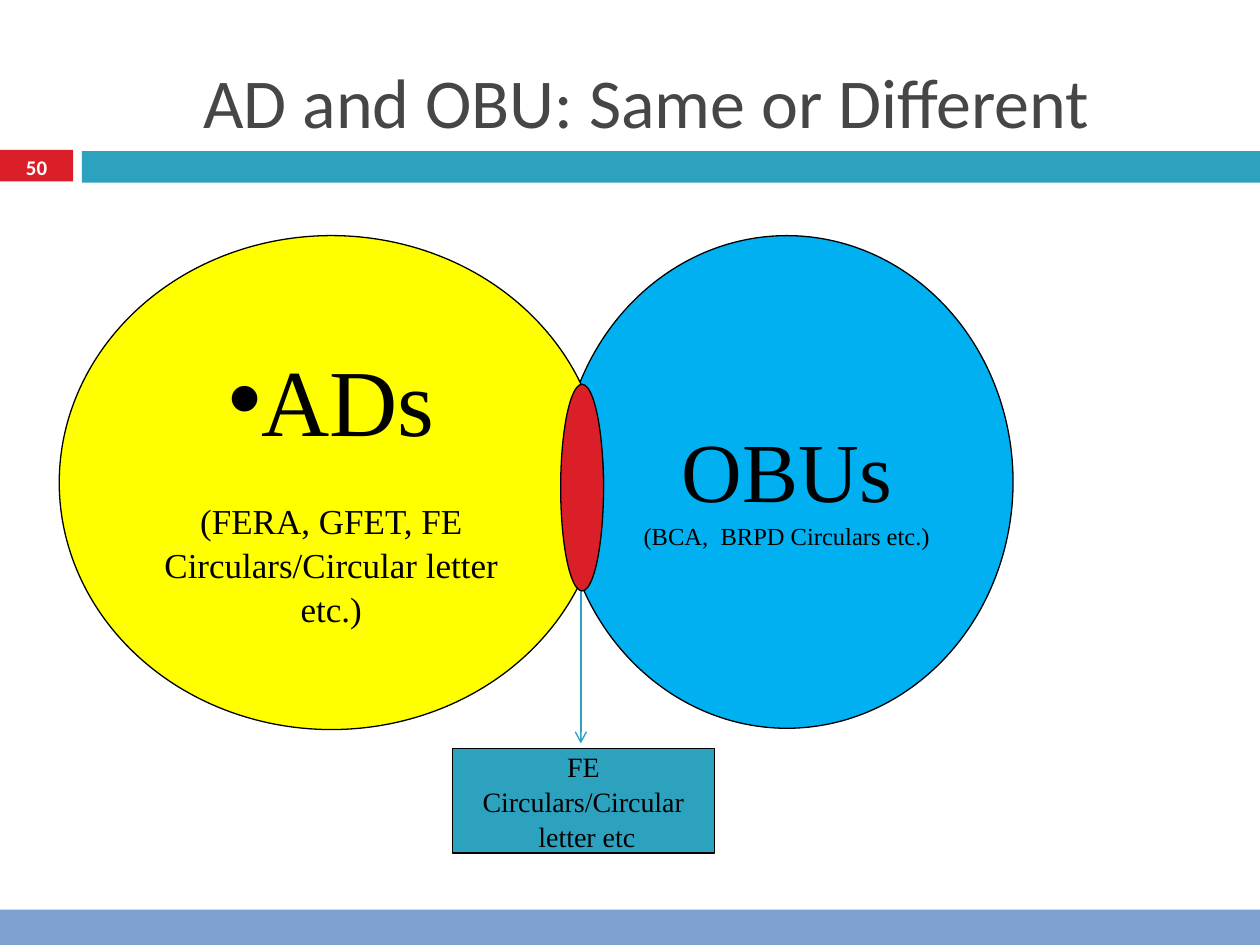
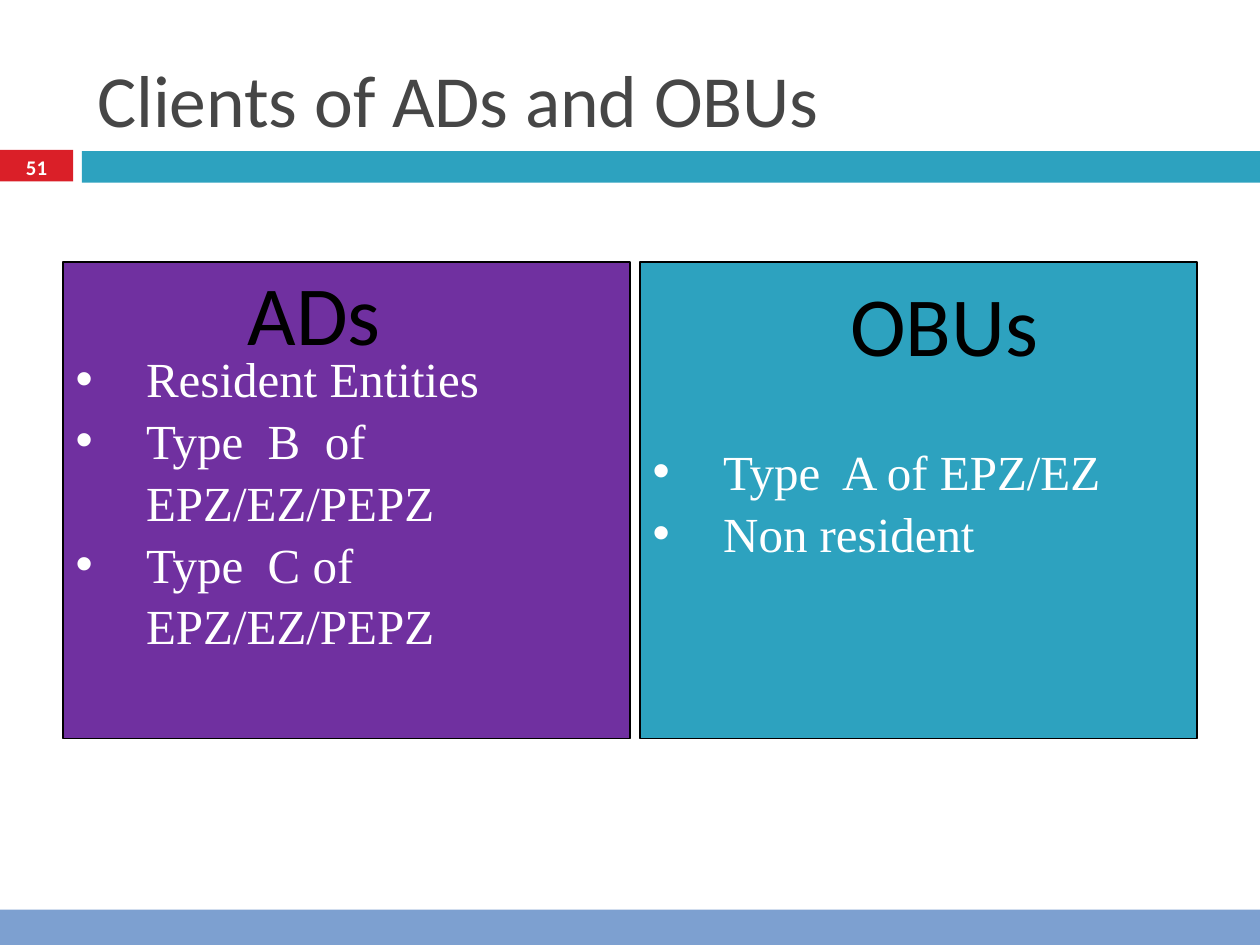
"""Build two slides comparing ADs and OBUs."""
from lxml import etree
from pptx import Presentation, util as u
from pptx.dml.color import RGBColor
from pptx.enum import shapes, text
from pptx.oxml import ns

RED = RGBColor(0xDA, 0x1F, 0x28)
TEAL = RGBColor(0x2D, 0xA2, 0xBF)
STEEL = RGBColor(0x7D, 0xA0, 0xD0)
SKY = RGBColor(0x00, 0xB0, 0xF0)
YELLOW = RGBColor(0xFF, 0xFF, 0x00)
PURPLE = RGBColor(0x70, 0x30, 0xA0)
GREY = RGBColor(0x46, 0x46, 0x46)
BLACK = RGBColor(0, 0, 0)
WHITE = RGBColor(0xFF, 0xFF, 0xFF)

SANS, SERIF = "Calibri", "Times New Roman"
RECT = shapes.MSO_SHAPE.RECTANGLE
OVAL = shapes.MSO_SHAPE.OVAL
LEFT, CENTER = text.PP_ALIGN.LEFT, text.PP_ALIGN.CENTER
TOP, MIDDLE, BOTTOM = (text.MSO_ANCHOR.TOP, text.MSO_ANCHOR.MIDDLE,
                       text.MSO_ANCHOR.BOTTOM)


def apply(obj, values):
    """Set each named attribute of an object."""
    for name, value in values.items():
        setattr(obj, name, value)


def inches(*lengths):
    """Turn numbers into lengths."""
    return [u.Inches(n) for n in lengths]


def place(sp, box):
    """Move and size a placeholder."""
    apply(sp, dict(zip(("left", "top", "width", "height"), inches(*box))))


def paint(sp, fill, outlined=True):
    """Fill a shape and give it a thin black outline or none."""
    sp.fill.solid()
    sp.fill.fore_color.rgb = fill
    if outlined:
        sp.line.color.rgb = BLACK
        sp.line.width = u.Pt(0.75)
    else:
        sp.line.fill.background()


def add_block(s, kind, box, fill, outlined=True):
    """Add a flat preset shape."""
    sp = s.shapes.add_shape(kind, *inches(*box))
    sp.shadow.inherit = False
    paint(sp, fill, outlined)
    return sp


def set_frame(sp, anchor):
    """Prepare a wrapped text frame and return it."""
    tf = sp.text_frame
    apply(tf, {"word_wrap": True, "auto_size": text.MSO_AUTO_SIZE.NONE,
               "vertical_anchor": anchor})
    return tf


def add_bullet(p, hang):
    """Give a paragraph a round bullet and a hanging indent."""
    pPr = p._p.get_or_add_pPr()
    pPr.set("marL", str(u.Inches(hang)))
    pPr.set("indent", str(-u.Inches(hang)))
    etree.SubElement(pPr, ns.qn("a:buFont")).set("typeface", "Arial")
    etree.SubElement(pPr, ns.qn("a:buChar")).set("char", "•")


def write(sp, lines, font, color, align=CENTER, anchor=MIDDLE, spacing=1.0,
          bold=False, hang=None):
    """Write (wording, size, space before) lines; hang makes them a list."""
    tf = set_frame(sp, anchor)
    for i, (wording, size, before) in enumerate(lines):
        p = tf.add_paragraph() if i else tf.paragraphs[0]
        apply(p, {"alignment": align, "line_spacing": spacing,
                  "space_before": u.Pt(before)})
        if hang is not None:
            add_bullet(p, hang)
        r = p.add_run()
        r.text = wording
        apply(r.font, {"name": font, "size": u.Pt(size), "bold": bold})
        r.font.color.rgb = color


def add_label(s, box, wording, size, color, **style):
    """Add a text box with one sans-serif line."""
    sp = s.shapes.add_textbox(*inches(*box))
    write(sp, [(wording, size, 0)], SANS, color, **style)


def add_arrow(s, x, top, bottom):
    """Add a thin arrow pointing down."""
    line = s.shapes.add_connector(shapes.MSO_CONNECTOR.STRAIGHT,
                                  *inches(x, top, x, bottom))
    line.line.color.rgb = TEAL
    line.line.width = u.Pt(0.79)
    ln = line.line._get_or_add_ln()
    etree.SubElement(ln, ns.qn("a:tailEnd")).set("type", "arrow")
    etree.SubElement(line._element.spPr, ns.qn("a:effectLst"))


def add_slide(prs, layout, title, size, align, number):
    """Add a slide with the shared bands, title and number."""
    s = prs.slides.add_slide(prs.slide_layouts.get_by_name(layout))
    for box, fill in (((0, 1.19, 0.58, 0.25), RED),
                      ((0.65, 1.2, 9.35, 0.25), TEAL),
                      ((0, 7.22, 10, 0.28), STEEL)):
        add_block(s, RECT, box, fill, outlined=False)
    place(s.shapes.title, (0.67, 0.06, 8.92, 1.12))
    write(s.shapes.title, [(title, size, 0)], SANS, GREY, align, BOTTOM)
    add_label(s, (0, 1.19, 0.58, 0.27), str(number), 11.9, WHITE, bold=True)
    return s


def add_panel(sp, box, fill, items):
    """Turn a body placeholder into a coloured list panel."""
    place(sp, box)
    paint(sp, fill)
    write(sp, [(item, 28, 0) for item in items], SERIF, WHITE, LEFT,
          spacing=1.05, hang=0.56)


def build_overlap(prs):
    """Build the slide with the two overlapping circles."""
    s = add_slide(prs, "Title Only", "AD and OBU: Same or Different", 40,
                  CENTER, 50)
    obus = add_block(s, OVAL, (4.45, 1.87, 3.59, 3.91), SKY)
    write(obus, [("OBUs", 48, 0), ("(BCA,  BRPD Circulars etc.)", 14, 0)],
          SERIF, BLACK, spacing=1.05)
    ads = add_block(s, OVAL, (0.47, 1.87, 4.32, 3.92), YELLOW)
    write(ads, [("ADs", 54, 0),
                ("(FERA, GFET, FE Circulars/Circular letter etc.)", 20, 24)],
          SERIF, BLACK, spacing=1.05)
    add_bullet(ads.text_frame.paragraphs[0], 0)
    add_arrow(s, 4.61, 4.06, 5.9)
    shared = add_block(s, RECT, (3.59, 5.94, 2.08, 0.83), TEAL)
    write(shared, [("FE Circulars/Circular", 16, 0), (" letter etc", 16, 0)],
          SERIF, BLACK, spacing=1.05)
    add_block(s, OVAL, (4.45, 3.05, 0.34, 1.64), RED)


def build_clients(prs):
    """Build the slide with the two client lists."""
    s = add_slide(prs, "Two Content", "Clients of ADs and OBUs", 42, LEFT, 51)
    add_panel(s.placeholders[1], (0.5, 2.08, 4.5, 3.78), PURPLE,
              ["Resident Entities", "Type  B  of EPZ/EZ/PEPZ",
               "Type  C of EPZ/EZ/PEPZ"])
    add_panel(s.placeholders[2], (5.08, 2.08, 4.42, 3.78), TEAL,
              ["Type  A of EPZ/EZ", "Non resident"])
    for x, y, heading in ((1.41, 2.03, "ADs"), (6.41, 2.11, "OBUs")):
        add_label(s, (x, y, 2.17, 0.91), heading, 48, BLACK, anchor=TOP)


def main():
    """Build and save the slides."""
    prs = Presentation()
    prs.slide_width, prs.slide_height = inches(10, 7.5)
    build_overlap(prs)
    build_clients(prs)
    prs.save("out.pptx")


if __name__ == "__main__":
    main()
